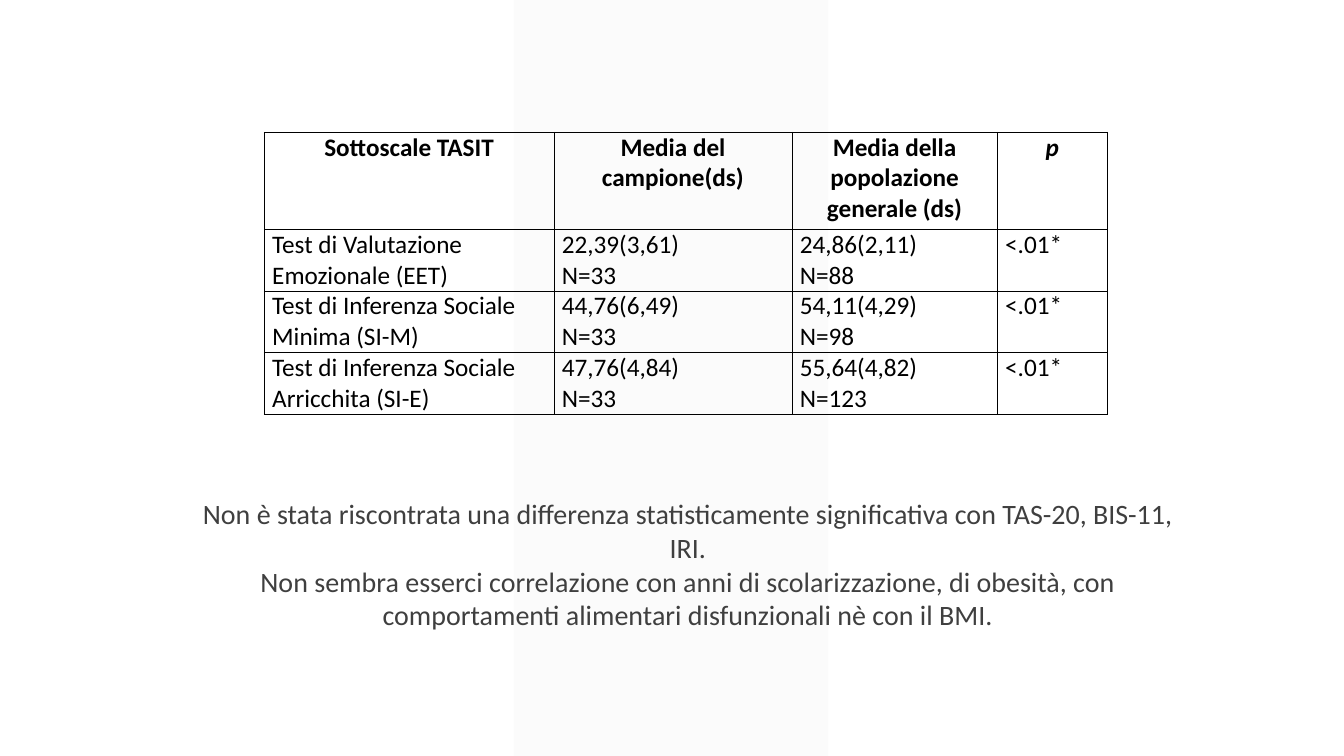
from lxml.etree import SubElement
from pptx import Presentation
from pptx.dml.color import RGBColor
from pptx.enum.shapes import MSO_SHAPE
from pptx.enum.text import PP_ALIGN
from pptx.oxml.ns import qn
from pptx.util import Cm, Pt

FONT = "Calibri"
BLACK, GREY, BAND = "000000", "3F3F3F", "F2F2F2"

HEADERS = ["Sottoscale TASIT", "Media del campione(ds)",
           "Media della popolazione generale (ds)", "p"]
RESULTS = [
    ["Test di Valutazione Emozionale (EET)", "22,39(3,61)\nN=33", "24,86(2,11)\nN=88", "<.01*"],
    ["Test di Inferenza Sociale Minima (SI-M)", "44,76(6,49)\nN=33", "54,11(4,29)\nN=98", "<.01*"],
    ["Test di Inferenza Sociale Arricchita (SI-E)", "47,76(4,84)\nN=33", "55,64(4,82)\nN=123", "<.01*"],
]
NOTES = [
    "Non è stata riscontrata una differenza statisticamente significativa con TAS-20, BIS-11, IRI.",
    "Non sembra esserci correlazione con anni di scolarizzazione, di obesità, "
    "con comportamenti alimentari disfunzionali nè con il BMI.",
]
COLUMN_WIDTHS = [7.3, 6, 5.17, 2.78]
ROW_HEIGHTS = [2.45] + [1.5] * len(RESULTS)


def color(hex_code):
    return RGBColor.from_string(hex_code)


def format_text(frame, size, hex_code, align, bold=False):
    for para in frame.paragraphs:
        para.alignment = align
        for span in para.runs:
            span.font.name = FONT
            span.font.size = Pt(size)
            span.font.bold = bold
            span.font.color.rgb = color(hex_code)


def add_borders(cell):
    properties = cell._tc.get_or_add_tcPr()
    for side in ("a:lnL", "a:lnR", "a:lnT", "a:lnB"):
        line = SubElement(properties, qn(side), w=str(Pt(0.5)))
        fill = SubElement(line, qn("a:solidFill"))
        SubElement(fill, qn("a:srgbClr"), val=BLACK)


def add_band(page, height):
    band = page.shapes.add_shape(MSO_SHAPE.PARALLELOGRAM, Cm(12.95), 0, Cm(7.92), height)
    band.adjustments[0] = 0
    band.shadow.inherit = False
    band.fill.solid()
    band.fill.fore_color.rgb = color(BAND)
    tint = band.fill._xPr.find(qn("a:solidFill"))[0]
    SubElement(tint, qn("a:alpha"), val="30000")
    band.line.fill.background()


def add_results(page):
    rows = [HEADERS] + RESULTS
    table = page.shapes.add_table(len(rows), len(HEADERS), Cm(6.66), Cm(3.33),
                                  Cm(sum(COLUMN_WIDTHS)), Cm(sum(ROW_HEIGHTS))).table
    table.first_row = table.horz_banding = False
    for column, width in zip(table.columns, COLUMN_WIDTHS):
        column.width = Cm(width)
    for row, height in zip(table.rows, ROW_HEIGHTS):
        row.height = Cm(height)
    for r, texts in enumerate(rows):
        for c, text in enumerate(texts):
            cell = table.cell(r, c)
            cell.margin_left = cell.margin_right = Cm(0.2)
            cell.margin_top = cell.margin_bottom = 0
            cell.text_frame.text = text
            is_header = r == 0
            format_text(cell.text_frame, 18, BLACK,
                        PP_ALIGN.CENTER if is_header else PP_ALIGN.LEFT, is_header)
            add_borders(cell)
            cell.fill.background()
    p_header = table.cell(0, len(HEADERS) - 1)
    p_header.text_frame.paragraphs[0].runs[0].font.italic = True


def add_notes(page):
    box = page.shapes.add_textbox(Cm(4.62), Cm(12.27), Cm(25.43), Cm(2.72))
    frame = box.text_frame
    frame.word_wrap = True
    frame.margin_left = frame.margin_right = Cm(0.25)
    frame.margin_top = frame.margin_bottom = Cm(0.25)
    frame.text = "\n".join(NOTES)
    format_text(frame, 20, GREY, PP_ALIGN.CENTER)


def main():
    deck = Presentation()
    deck.slide_width, deck.slide_height = Cm(33.87), Cm(19.05)
    page = deck.slides.add_slide(deck.slide_layouts[6])
    add_band(page, deck.slide_height)
    add_results(page)
    add_notes(page)
    deck.save("out.pptx")


if __name__ == "__main__":
    main()
